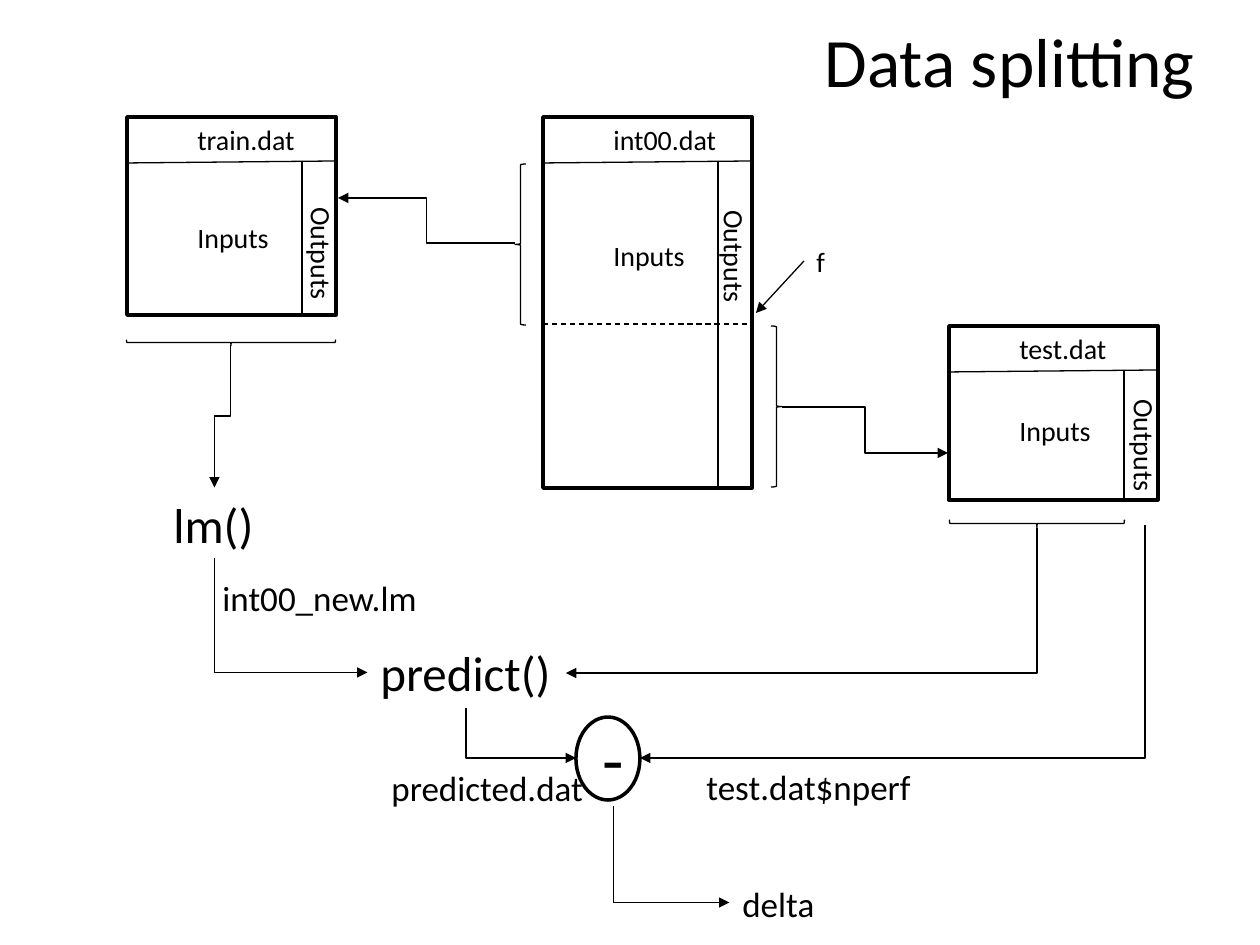
"""Build the data splitting diagram slide."""
import pptx
import pptx.dml.color
import pptx.enum.dml
import pptx.enum.shapes
import pptx.enum.text
import pptx.oxml
import pptx.oxml.ns
import pptx.util

PX = 7257
BLACK = pptx.dml.color.RGBColor.from_string("000000")
SHAPE = pptx.enum.shapes.MSO_SHAPE
STRAIGHT = pptx.enum.shapes.MSO_CONNECTOR.STRAIGHT
ELBOW = pptx.enum.shapes.MSO_CONNECTOR.ELBOW
NS = pptx.oxml.ns.nsdecls("a")

prs = pptx.Presentation()
prs.slide_width = pptx.util.Inches(10)
prs.slide_height = pptx.util.Inches(7.5)
slide = prs.slides.add_slide(prs.slide_layouts[6])


def add_text(text, x, y, w, h, size):
    sp = slide.shapes.add_textbox(x * PX, y * PX, w * PX, h * PX)
    tf = sp.text_frame
    tf.word_wrap = False
    r = tf.paragraphs[0].add_run()
    r.text = text
    r.font.name = "Calibri"
    r.font.size = pptx.util.Pt(size)
    r.font.color.rgb = BLACK
    return tf


def add_line(kind, x1, y1, x2, y2, arrow=False):
    s = slide.shapes.add_connector(kind, x1 * PX, y1 * PX, x2 * PX, y2 * PX)
    s.line.color.rgb = BLACK
    s.line.width = pptx.util.Pt(0.75)
    if arrow:
        s.line._get_or_add_ln().append(pptx.oxml.parse_xml(f'<a:tailEnd {NS} type="triangle"/>'))
    s._element.spPr.append(pptx.oxml.parse_xml(f"<a:effectLst {NS}/>"))
    return s


for kind, x, y, w, h, rotation, width in [
    (SHAPE.RECTANGLE, 543, 117, 209, 371, 0, 2),
    (SHAPE.RECTANGLE, 127, 117, 209, 198, 0, 2),
    (SHAPE.RECTANGLE, 949, 326, 209, 174, 0, 2),
    (SHAPE.OVAL, 576, 717, 64, 83, 0, 2),
    (SHAPE.LEFT_BRACE, 515, 164, 11, 161, 0, 0.75),
    (SHAPE.LEFT_BRACE, 771, 326, 11, 161, 180, 0.75),
    (SHAPE.LEFT_BRACE, 1033, 436, 8, 175, 270, 0.75),
    (SHAPE.LEFT_BRACE, 228, 238, 6, 209, 270, 0.75),
]:
    sp = slide.shapes.add_shape(kind, x * PX, y * PX, w * PX, h * PX)
    sp.rotation = rotation
    sp.shadow.inherit = False
    sp.fill.background()
    sp.line.color.rgb = BLACK
    sp.line.width = pptx.util.Pt(width)

for name, x, y, w, h, inputs_y, outputs_x, outputs_y in [
    ("int00.dat", 543, 117, 130, 371, 232, 699, 198),
    ("train.dat", 127, 117, 123, 198, 214, 286, 195),
    ("test.dat", 949, 326, 113, 174, 407, 1109, 387),
]:
    add_text(name, x + 58, y - 1, w, 47, 16)
    add_text("Inputs", x + 58, inputs_y, 97, 47, 16)
    tf = add_text("Outputs", outputs_x, outputs_y, 59, 106, 16)
    tf._txBody.bodyPr.set("vert", "vert")
    add_line(STRAIGHT, x, y + 46, x + 209, y + 44)
    add_line(STRAIGHT, x + 175, y + 44, x + 175, y + h)

s = add_line(STRAIGHT, 543, 324, 752, 324)
s.line.dash_style = pptx.enum.dml.MSO_LINE.DASH
add_line(STRAIGHT, 804, 261, 756, 313, True)
add_line(ELBOW, 515, 243, 338, 198, True)
add_line(ELBOW, 782, 407, 948, 453, True)

for preset, x1, y1, x2, y2 in [
    ("bentConnector3", 231, 345, 215, 488),
    ("bentConnector2", 215, 559, 368, 673),
    ("bentConnector2", 1037, 528, 566, 673),
    ("bentConnector2", 466, 708, 576, 758),
    ("bentConnector2", 1145, 525, 640, 758),
    ("bentConnector2", 614, 806, 730, 903),
]:
    w, h = y2 - y1, abs(x2 - x1)
    left, top = (x1 + x2 - w) // 2, (y1 + y2 - h) // 2
    start, end, rotation = (left, left + w, 90) if x2 < x1 else (left + w, left, 270)
    s = add_line(ELBOW, start, top, end, top + h, True)
    s._element.spPr.find(pptx.oxml.ns.qn("a:prstGeom")).set("prst", preset)
    s._element.spPr.find(pptx.oxml.ns.qn("a:xfrm")).set("rot", str(rotation * 60000))

for text, x, y, w, h, size in [
    ("f", 804, 238, 34, 47, 16),
    ("lm()", 161, 488, 106, 72, 28),
    ("predict()", 368, 636, 198, 72, 28),
    ("-", 590, 709, 47, 97, 40),
    ("delta", 730, 876, 98, 55, 20),
    ("int00_new.lm", 210, 570, 222, 55, 20),
    ("predicted.dat", 379, 760, 219, 55, 20),
    ("test.dat$nperf", 694, 759, 232, 55, 20),
]:
    add_text(text, x, y, w, h, size)

tf = add_text("Data splitting", 31, 21, 1176, 78, 39.6)
tf.word_wrap = True
tf.vertical_anchor = pptx.enum.text.MSO_ANCHOR.MIDDLE
tf.paragraphs[0].alignment = pptx.enum.text.PP_ALIGN.RIGHT

prs.save("out.pptx")
